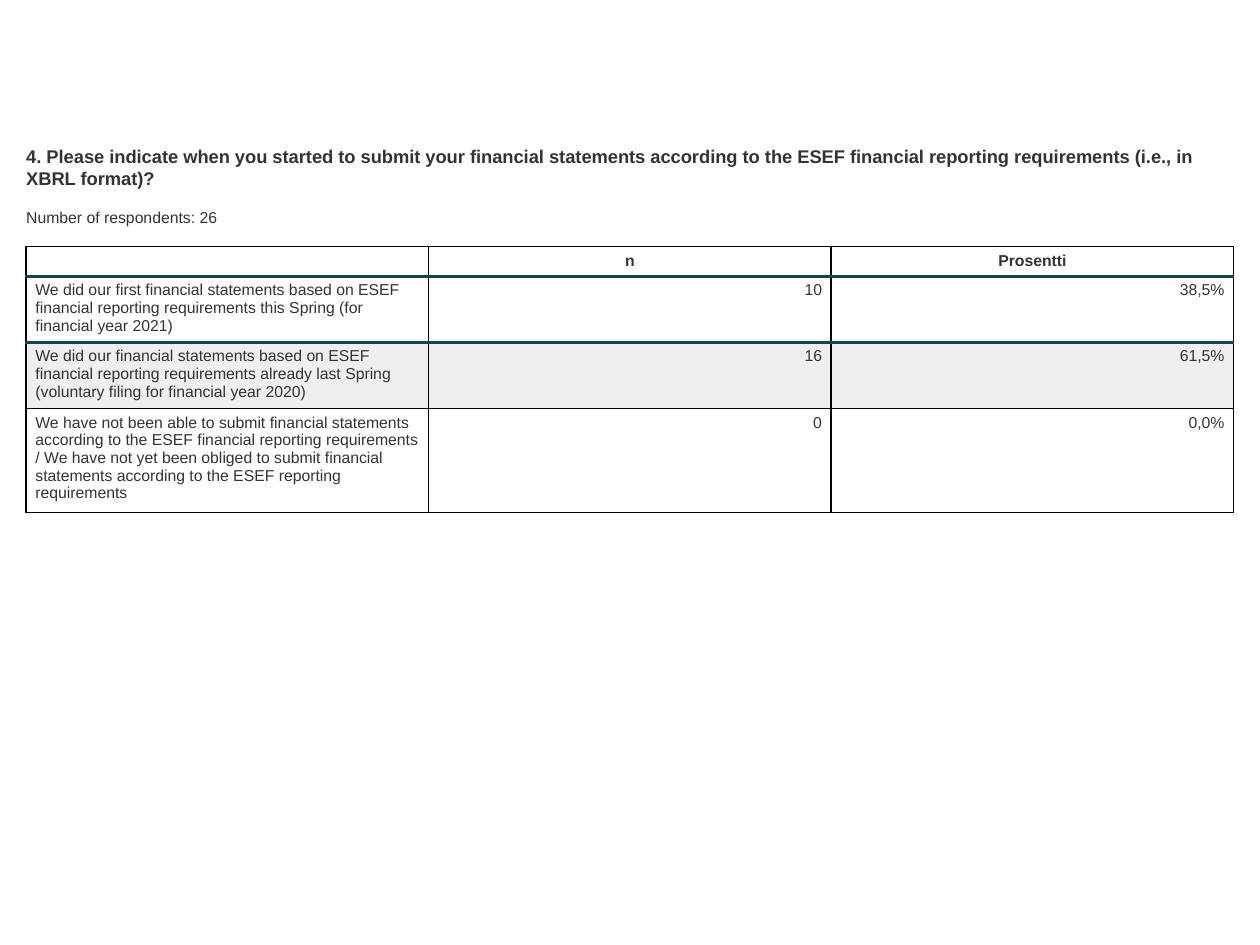
import pptx
import pptx.dml.color
import pptx.enum.text
import pptx.oxml.ns
import pptx.util
from lxml import etree

Pt = pptx.util.Pt
RGBColor = pptx.dml.color.RGBColor
ALIGN = pptx.enum.text.PP_ALIGN

TEXT = RGBColor(0x33, 0x33, 0x33)
TEAL = RGBColor(0x12, 0x44, 0x56)
BLACK = RGBColor(0, 0, 0)
BAND = RGBColor(0xEF, 0xEF, 0xEF)

LEFT, WIDTH = 15, 690
HEADER = ["", "n", "Prosentti"]
ANSWERS = [
    ["We did our first financial statements based on ESEF financial reporting "
     "requirements this Spring (for financial year 2021)", "10", "38,5%"],
    ["We did our financial statements based on ESEF financial reporting "
     "requirements already last Spring (voluntary filing for financial year 2020)",
     "16", "61,5%"],
    ["We have not been able to submit financial statements according to the ESEF "
     "financial reporting requirements / We have not yet been obliged to submit "
     "financial statements according to the ESEF reporting requirements",
     "0", "0,0%"],
]
ROW_HEIGHTS = [16.6, 37.8, 37.8, 59.4]


class SurveySlide:
    font = "Arial"
    size = 9

    def __init__(self, prs):
        self.s = prs.slides.add_slide(prs.slide_layouts[5])

    def style(self, tf, size, bold=False, align=ALIGN.LEFT):
        for p in tf.paragraphs:
            p.alignment = align
            for r in p.runs:
                r.font.name = self.font
                r.font.size = Pt(size)
                r.font.bold = bold
                r.font.color.rgb = TEXT

    def fill_frame(self, sp, text, size, bold=False):
        tf = sp.text_frame
        tf.text = text
        tf.word_wrap = True
        tf.auto_size = pptx.enum.text.MSO_AUTO_SIZE.NONE
        tf.vertical_anchor = pptx.enum.text.MSO_ANCHOR.TOP
        tf.margin_left = tf.margin_right = tf.margin_top = tf.margin_bottom = 0
        self.style(tf, size, bold)

    def title(self, text, top, height):
        sp = self.s.shapes.title
        sp.left, sp.top, sp.width, sp.height = Pt(LEFT), Pt(top), Pt(WIDTH), Pt(height)
        self.fill_frame(sp, text, 10.5, bold=True)

    def text(self, text, top, height):
        sp = self.s.shapes.add_textbox(Pt(LEFT), Pt(top), Pt(WIDTH), Pt(height))
        self.fill_frame(sp, text, self.size)

    def border(self, cell, side, color, width):
        qn = pptx.oxml.ns.qn
        tc_pr = cell._tc.get_or_add_tcPr()
        ln = etree.SubElement(tc_pr, qn(f"a:ln{side}"), w=str(Pt(width)))
        fill = etree.SubElement(ln, qn("a:solidFill"))
        etree.SubElement(fill, qn("a:srgbClr"), val=str(color))

    def cell(self, cell, text, bold, align, teal_sides, band):
        cell.text = text
        cell.margin_left = cell.margin_right = Pt(5.25)
        cell.margin_top = cell.margin_bottom = Pt(3)
        self.style(cell.text_frame, self.size, bold, align)
        if not text:  # keeps the empty cell from stretching its row
            end = cell.text_frame.paragraphs[0]._p.get_or_add_endParaRPr()
            end.set("sz", str(self.size * 100))
        for side in "LRTB":
            teal = side in teal_sides
            self.border(cell, side, TEAL if teal else BLACK, 2 if teal else 1)
        if band:
            cell.fill.solid()
            cell.fill.fore_color.rgb = BAND
        else:
            cell.fill.background()

    def table(self, rows, heights, top):
        frame = self.s.shapes.add_table(len(rows), len(rows[0]), Pt(LEFT), Pt(top),
                                        Pt(WIDTH), Pt(sum(heights)))
        table = frame.table
        table.first_row = table.horz_banding = False
        # Teal rules lie above and below the first answer
        teal = {0: "B", 1: "TB", 2: "T"}
        for i, (row, height) in enumerate(zip(rows, heights)):
            table.rows[i].height = Pt(height)
            for j, text in enumerate(row):
                align = ALIGN.CENTER if i == 0 else ALIGN.RIGHT if j else ALIGN.LEFT
                self.cell(table.cell(i, j), text, i == 0, align,
                          teal.get(i, ""), band=i == 2)


def main():
    prs = pptx.Presentation()
    prs.slide_width, prs.slide_height = Pt(720), Pt(540)
    slide = SurveySlide(prs)

    # Question and respondent count
    slide.title("4. Please indicate when you started to submit your financial "
                "statements according to the ESEF financial reporting requirements "
                "(i.e., in XBRL format)?", 83, 25)
    slide.text("Number of respondents: 26", 119, 11)

    # Answers
    slide.table([HEADER] + ANSWERS, ROW_HEIGHTS, 141)

    prs.save("out.pptx")


if __name__ == "__main__":
    main()
